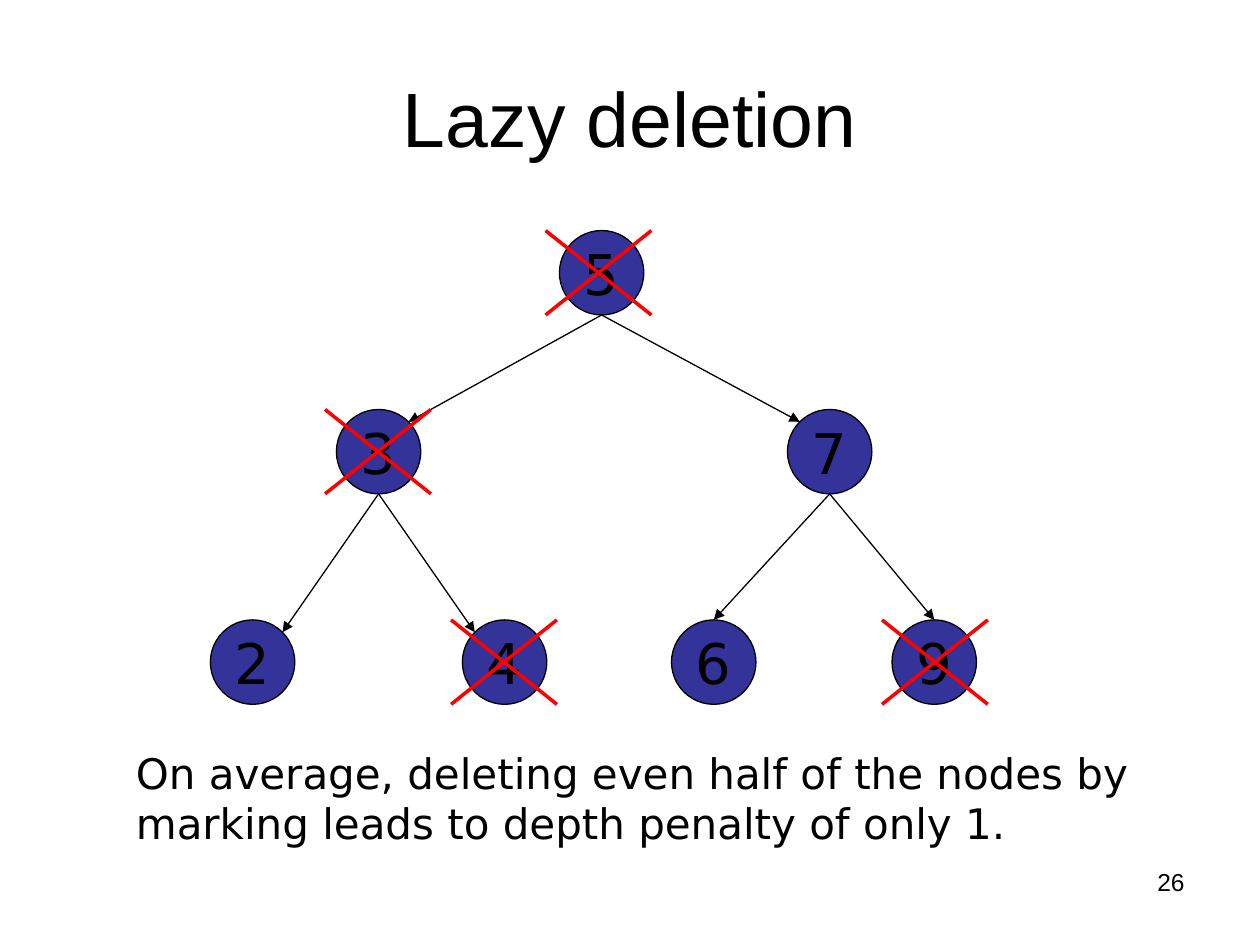
from math import sqrt

from pptx import Presentation
from pptx.dml.color import RGBColor
from pptx.enum.shapes import MSO_CONNECTOR as Connector, MSO_SHAPE as Shape
from pptx.enum.text import MSO_ANCHOR as Anchor, PP_ALIGN as Align
from pptx.util import Inches, Pt
from lxml.etree import SubElement
from pptx.oxml.ns import qn

BLACK = RGBColor(0x00, 0x00, 0x00)
RED = RGBColor(0xFF, 0x00, 0x00)
NODE_BLUE = RGBColor(0x33, 0x33, 0x99)

NODE_SIZE = 0.67
CROSS_WIDTH = 0.84
TOP_SITE = 0

# Left and top of each tree node, by its key
NODES = {
    "5": (4.44, 1.83),
    "3": (2.67, 3.25),
    "7": (6.25, 3.25),
    "2": (1.67, 4.92),
    "4": (3.67, 4.92),
    "6": (5.33, 4.92),
    "9": (7.08, 4.92),
}
# Parent, child, and where the arrow meets the child:
# -1 upper left, 0 top, 1 upper right
EDGES = [
    ("5", "3", 1), ("5", "7", -1),
    ("3", "2", 1), ("3", "4", -1),
    ("7", "6", 0), ("7", "9", 0),
]
# Left edge of the cross over each deleted node
DELETED = {"3": 2.58, "4": 3.58, "9": 7.0, "5": 4.33}


def write(frame, text, size, font="DejaVu Sans", align=Align.LEFT,
          anchor=Anchor.TOP, wrap=True):
    frame.word_wrap = wrap
    frame.vertical_anchor = anchor
    paragraph = frame.paragraphs[0]
    paragraph.alignment = align
    run = paragraph.add_run()
    run.text = text
    run.font.size = Pt(size)
    run.font.name = font
    run.font.color.rgb = BLACK


def add_text(slide, box, text, size, **text_format):
    label = slide.shapes.add_textbox(*map(Inches, box))
    write(label.text_frame, text, size, **text_format)


def add_node(slide, key):
    left, top = NODES[key]
    node = slide.shapes.add_shape(Shape.OVAL, Inches(left), Inches(top),
                                  Inches(NODE_SIZE), Inches(NODE_SIZE))
    node.shadow.inherit = False
    node.fill.solid()
    node.fill.fore_color.rgb = NODE_BLUE
    node.line.color.rgb = BLACK
    node.line.width = Pt(0.75)
    write(node.text_frame, key, 32, align=Align.CENTER,
          anchor=Anchor.MIDDLE, wrap=False)
    return node


def add_line(slide, start, end, color, width):
    line = slide.shapes.add_connector(Connector.STRAIGHT,
                                      *map(Inches, (*start, *end)))
    line.line.color.rgb = color
    line.line.width = Pt(width)
    SubElement(line._element.spPr, qn("a:effectLst"))
    return line


def add_edge(slide, nodes, parent, child, side):
    radius = NODE_SIZE / 2
    parent_left, parent_top = NODES[parent]
    child_left, child_top = NODES[child]
    start = (parent_left + radius, parent_top + NODE_SIZE)
    # Diagonal ends lie on the circle at 45 degrees
    drop = radius * (1 - sqrt(0.5)) if side else 0
    end = (child_left + radius + side * radius * sqrt(0.5), child_top + drop)
    edge = add_line(slide, start, end, BLACK, 0.75)
    if side == 0:
        edge.end_connect(nodes[child], TOP_SITE)
    SubElement(edge.line._get_or_add_ln(), qn("a:tailEnd"), type="triangle")


def add_cross(slide, key, left):
    top = NODES[key][1]
    right, bottom = left + CROSS_WIDTH, top + NODE_SIZE
    add_line(slide, (left, top), (right, bottom), RED, 2)
    add_line(slide, (left, bottom), (right, top), RED, 2)


def main():
    deck = Presentation()
    deck.slide_width, deck.slide_height = Inches(10), Inches(7.5)
    slide = deck.slides.add_slide(deck.slide_layouts[5])

    # Title
    title = slide.shapes.title
    title.left, title.top = Inches(0.5), Inches(0.3)
    title.width, title.height = Inches(9), Inches(1.25)
    write(title.text_frame, "Lazy deletion", 44, font="Arial",
          align=Align.CENTER, anchor=Anchor.MIDDLE)

    # Search tree with its deleted nodes crossed out
    nodes = {key: add_node(slide, key) for key in NODES}
    for parent, child, side in EDGES:
        add_edge(slide, nodes, parent, child, side)
    for key, left in DELETED.items():
        add_cross(slide, key, left)

    # Conclusion and page number
    add_text(slide, (0.98, 5.88, 8.18, 0.91),
             "On average, deleting even half of the nodes by marking "
             "leads to depth penalty of only 1.", 24)
    add_text(slide, (7.17, 6.83, 2.33, 0.52), "26", 14, font="Arial",
             align=Align.RIGHT)

    deck.save("out.pptx")


if __name__ == "__main__":
    main()
